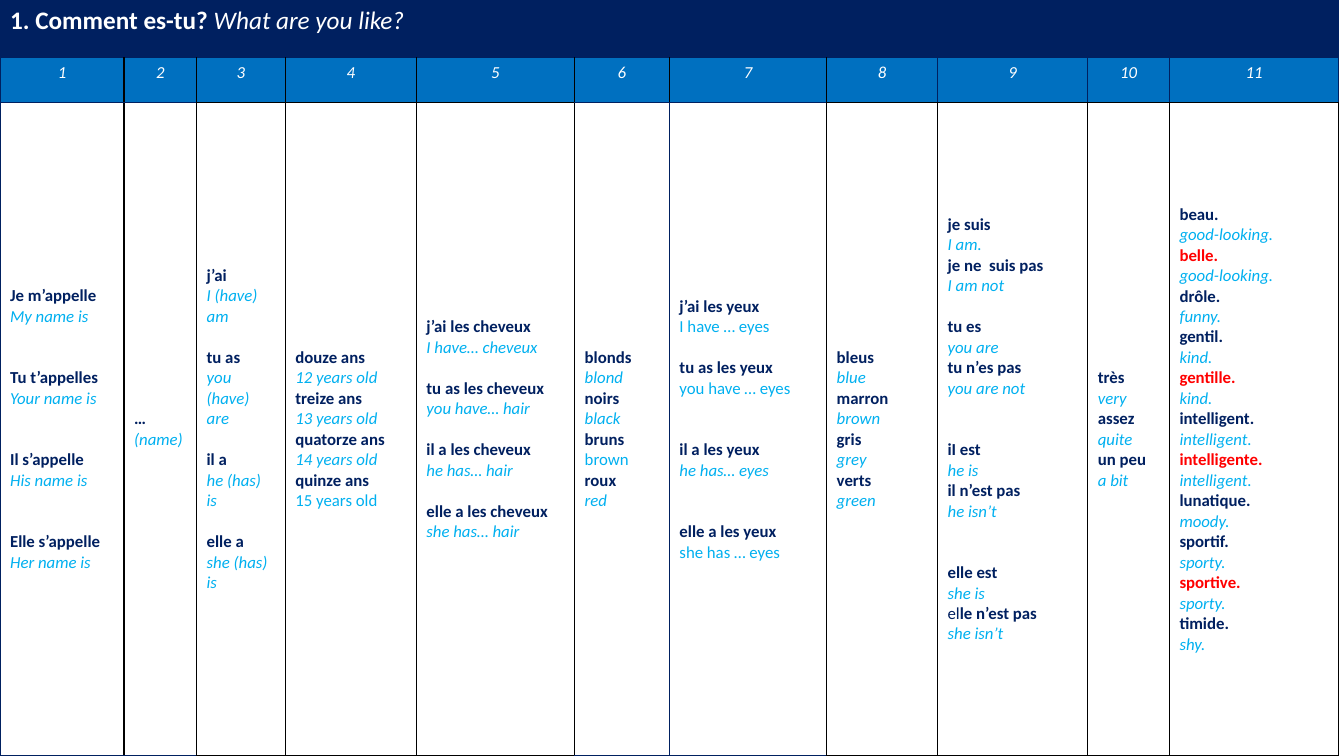
import pptx
import pptx.dml.color
import pptx.enum.text
import pptx.oxml
import pptx.oxml.ns
import pptx.util

COLORS = {"navy": "002060", "blue": "0070C0", "sky": "00B0F0",
          "red": "FF0000", "white": "FFFFFF", "black": "000000"}
COLUMN_WIDTHS = [1.23, 0.72, 0.88, 1.3, 1.57, 0.94, 1.56, 1.1, 1.49, 0.81, 1.68]
ROW_HEIGHTS = [0.57, 0.45, 6.48]
LINE_HEIGHT = 14.65  # points taken by one line of 12 pt Calibri

# Each column lists (French, English, empty lines above).
# Letters before "|" are not bold.
PHRASES = [
    [("Je m’appelle", "My name is", 0), ("Tu t’appelles", "Your name is", 2),
     ("Il s’appelle", "His name is", 2), ("Elle s’appelle", "Her name is", 2)],
    [("…", "(name)", 0)],
    [("j’ai", "I (have) am", 0), ("tu as", "you (have) are", 1),
     ("il a", "he (has) is", 1), ("elle a", "she (has) is", 1)],
    [("douze ans", "12 years old", 0), ("treize ans", "13 years old", 0),
     ("quatorze ans", "14 years old", 0), ("quinze ans", "15 years old", 0)],
    [("j’ai les cheveux", "I have… cheveux", 0),
     ("tu as les cheveux", "you have… hair", 1),
     ("il a les cheveux", "he has… hair", 1),
     ("elle a les cheveux", "she has… hair", 1)],
    [("blonds", "blond", 0), ("noirs", "black", 0),
     ("bruns", "brown", 0), ("roux", "red", 0)],
    [("j’ai les yeux", "I have … eyes", 0), ("tu as les yeux", "you have … eyes", 1),
     ("il a les yeux", "he has… eyes", 2), ("elle a les yeux", "she has … eyes", 2)],
    [("bleus", "blue", 0), ("marron", "brown", 0),
     ("gris", "grey", 0), ("verts", "green", 0)],
    [("je suis", "I am.", 0), ("je ne  suis pas", "I am not", 0),
     ("tu es", "you are", 1), ("tu n’es pas", "you are not", 0),
     ("iI est", "he is", 2), ("il n’est pas", "he isn’t", 0),
     ("elle est", "she is", 2), ("el|le n’est pas", "she isn’t", 0)],
    [("très", "very", 0), ("assez", "quite", 0), ("un peu", "a bit", 0)],
    [("beau.", "good-looking.", 0), ("belle.", "good-looking.", 0),
     ("drôle.", "funny.", 0), ("gentil.", "kind.", 0), ("gentille.", "kind.", 0),
     ("intelligent.", "intelligent.", 0), ("intelligente.", "intelligent.", 0),
     ("lunatique.", "moody.", 0), ("sportif.", "sporty.", 0),
     ("sportive.", "sporty.", 0), ("timide.", "shy.", 0)],
]
FEMININE = {"belle.", "gentille.", "intelligente.", "sportive."}
UPRIGHT_ENGLISH = {"quinze ans", "bruns", "j’ai les yeux",
                   "tu as les yeux", "elle a les yeux"}

# Vertical edges are counted from the left side of the table.
NAVY_HEADER_EDGES = {0, 8, 9, 10, 11}
NAVY_PHRASE_EDGES = {0, 6}
NAVY_FLOOR_COLUMNS = {0, 1, 5, 6}


def add_text(paragraph, text, color="white", size=12, bold=False, italic=False):
    run = paragraph.add_run()
    run.text = text
    run.font.name = "Calibri"
    run.font.size = pptx.util.Pt(size)
    run.font.bold = bold
    run.font.italic = italic
    run.font.color.rgb = pptx.dml.color.RGBColor.from_string(COLORS[color])


def format_cell(cell, fill, left, right, top, bottom):
    """Set the fill and the four 1 pt borders by colour name."""
    properties = cell._tc.get_or_add_tcPr()
    for tag, color in (("lnL", left), ("lnR", right), ("lnT", top), ("lnB", bottom)):
        properties.append(pptx.oxml.parse_xml(
            f'<a:{tag} {pptx.oxml.ns.nsdecls("a")} w="12700"><a:solidFill>'
            f'<a:srgbClr val="{COLORS[color]}"/></a:solidFill></a:{tag}>'))
    if fill is None:
        cell.fill.background()
    else:
        cell.fill.solid()
        cell.fill.fore_color.rgb = pptx.dml.color.RGBColor.from_string(COLORS[fill])


presentation = pptx.Presentation()
presentation.slide_width = pptx.util.Inches(13.33)
presentation.slide_height = pptx.util.Inches(7.5)
slide = presentation.slides.add_slide(presentation.slide_layouts[6])

table = slide.shapes.add_table(
    len(ROW_HEIGHTS), len(COLUMN_WIDTHS), 0, 0,
    pptx.util.Inches(sum(COLUMN_WIDTHS)), presentation.slide_height).table
table.first_row = False
table.horz_banding = False
for column, width in zip(table.columns, COLUMN_WIDTHS):
    column.width = pptx.util.Inches(width)
for row, height in zip(table.rows, ROW_HEIGHTS):
    row.height = pptx.util.Inches(height)

# Title row
title_cell = table.cell(0, 0)
title_cell.merge(table.cell(0, len(COLUMN_WIDTHS) - 1))
title = title_cell.text_frame.paragraphs[0]
add_text(title, "1. Comment es-tu? ", size=18, bold=True)
add_text(title, "What are you like?", size=18, italic=True)

for index, phrases in enumerate(PHRASES):
    format_cell(table.cell(0, index), "navy", "navy", "navy", "navy", "navy")
    header_sides = ["navy" if edge in NAVY_HEADER_EDGES else "black"
                    for edge in (index, index + 1)]
    phrase_sides = ["navy" if edge in NAVY_PHRASE_EDGES else "black"
                    for edge in (index, index + 1)]
    floor = "navy" if index in NAVY_FLOOR_COLUMNS else "black"

    # Column number
    header_cell = table.cell(1, index)
    format_cell(header_cell, "blue", *header_sides, "navy", floor)
    number = header_cell.text_frame.paragraphs[0]
    number.alignment = pptx.enum.text.PP_ALIGN.CENTER
    add_text(number, str(index + 1), italic=True)

    # French phrases with their English meaning
    phrase_cell = table.cell(2, index)
    format_cell(phrase_cell, None, *phrase_sides, floor, floor)
    phrase_cell.vertical_anchor = pptx.enum.text.MSO_ANCHOR.MIDDLE
    frame = phrase_cell.text_frame
    for position, (french, english, empty_lines) in enumerate(phrases):
        paragraph = frame.add_paragraph() if position else frame.paragraphs[0]
        paragraph.space_before = pptx.util.Pt(empty_lines * LINE_HEIGHT)
        plain, _, strong = french.rpartition("|")
        color = "red" if french in FEMININE else "navy"
        if plain:
            add_text(paragraph, plain, color=color)
        add_text(paragraph, strong, color=color, bold=True)
        add_text(frame.add_paragraph(), english, color="sky",
                 italic=french not in UPRIGHT_ENGLISH)

presentation.save("out.pptx")
